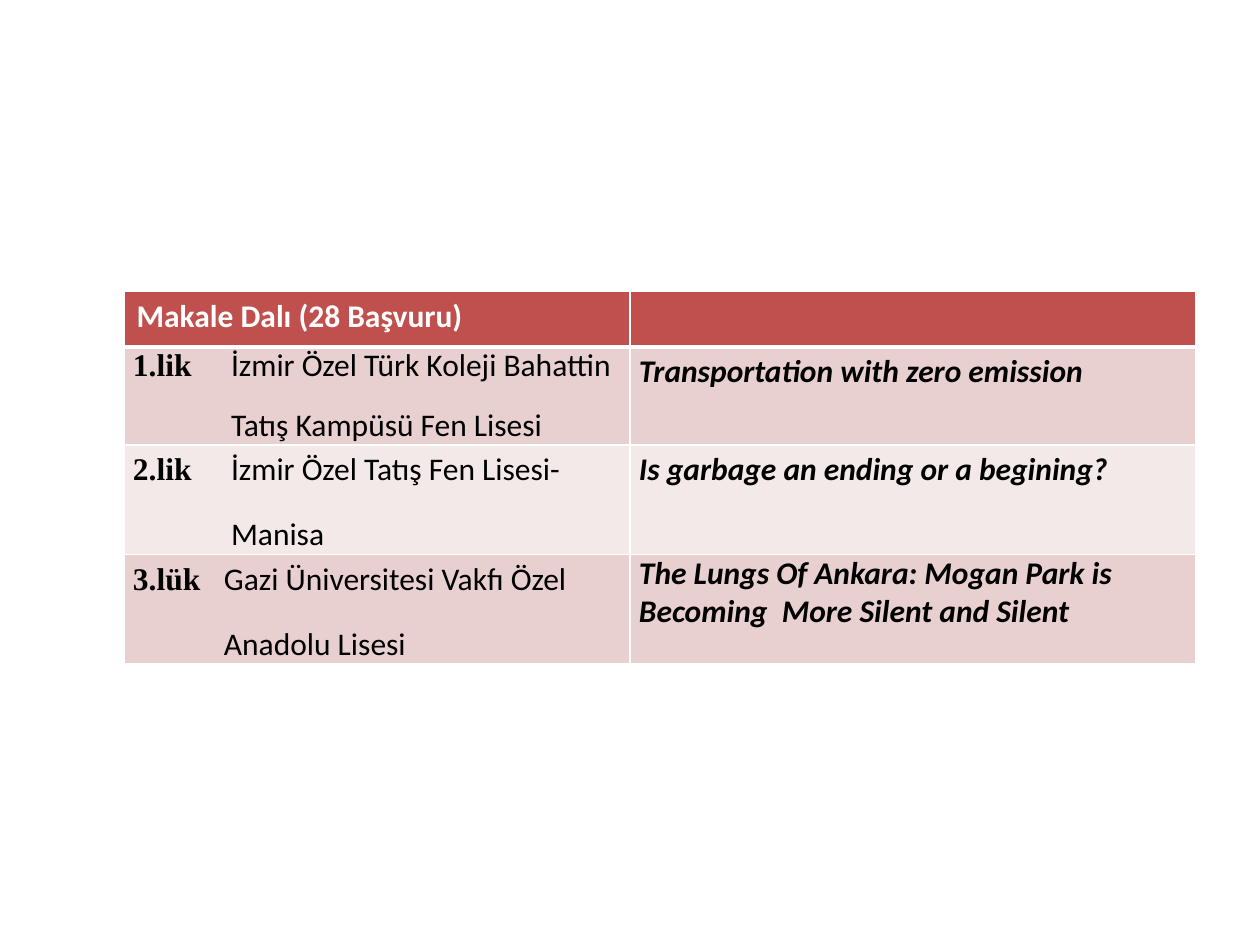
import pptx
import pptx.dml.color
import pptx.oxml
import pptx.oxml.ns
import pptx.util

PX = 914400 / 126


def px(n):
    return pptx.util.Emu(round(n * PX))


def rgb(code):
    return pptx.dml.color.RGBColor.from_string(code)


NS = pptx.oxml.ns.nsdecls("a")
GAP = pptx.util.Pt(6)

prs = pptx.Presentation()
prs.slide_width, prs.slide_height = px(1260), px(945)
slide = prs.slides.add_slide(prs.slide_layouts[6])

# Table grid
col_widths = [506, 566]
row_heights = [56, 97, 108, 107]
awards = slide.shapes.add_table(4, 2, px(124), px(291), px(sum(col_widths)),
                                px(sum(row_heights))).table
for column, width in zip(awards.columns, col_widths):
    column.width = px(width)
for row, height in zip(awards.rows, row_heights):
    row.height = px(height)

# White borders, heavier under the header, and row fills
fills = ["C0504D", "E8D0D0", "F4E9E9", "E8D0D0"]
for r, fill in enumerate(fills):
    for cell in awards.rows[r].cells:
        for side in "LRTB":
            heavy = (r, side) in [(0, "B"), (1, "T")]
            cell._tc.get_or_add_tcPr().append(pptx.oxml.parse_xml(
                f'<a:ln{side} {NS} w="{pptx.util.Pt(3 if heavy else 1)}"><a:solidFill>'
                f'<a:srgbClr val="FFFFFF"/></a:solidFill></a:ln{side}>'))
        cell.fill.solid()
        cell.fill.fore_color.rgb = rgb(fill)
        if r > 0:
            cell.margin_left = cell.margin_right = px(9)
            cell.margin_top = cell.margin_bottom = 0

# Header
awards.cell(0, 0).text = "Makale Dalı (28 Başvuru)"
for cell in awards.rows[0].cells:
    heading = cell.text_frame.paragraphs[0]
    heading.font.name = "Calibri"
    heading.font.size = pptx.util.Pt(18)
    heading.font.bold = True
    heading.font.color.rgb = rgb("FFFFFF")

# Rank, school in two lines, school indent, left spacing, article, right spacing
winners = [
    ("1.lik", "İzmir Özel Türk Koleji Bahattin", "Tatış Kampüsü Fen Lisesi", 98, None,
     "Transportation with zero emission", 1.15),
    ("2.lik", "İzmir Özel Tatış Fen Lisesi-", "Manisa", 98, 1.15,
     "Is garbage an ending or a begining?", 1.15),
    ("3.lük", "Gazi Üniversitesi Vakfı Özel", "Anadolu Lisesi", 91, 1.15,
     "The Lungs Of Ankara: Mogan Park is Becoming  More Silent and Silent", None),
]
for r, (rank, school, school_end, indent, spacing, article, article_spacing) in enumerate(winners, 1):
    entry = awards.cell(r, 0).text_frame
    first = entry.paragraphs[0]
    second = entry.add_paragraph()
    title = awards.cell(r, 1).text_frame.paragraphs[0]

    # School lines align at one tab and indent
    first.line_spacing = second.line_spacing = spacing
    first.space_after = second.space_before = second.space_after = GAP
    first._p.get_or_add_pPr().append(pptx.oxml.parse_xml(
        f'<a:tabLst {NS}><a:tab pos="{px(indent)}" algn="l"/></a:tabLst>'))
    second._p.get_or_add_pPr().set("marL", str(px(indent)))
    rank_run = first.add_run()
    rank_run.text = rank
    rank_run.font.name = "Times New Roman"
    rank_run.font.bold = True
    first.add_run().text = "\t" + school
    second.add_run().text = school_end

    # Article title
    title.add_run().text = article
    title.line_spacing = article_spacing
    if article_spacing:
        title.space_after = GAP

    for paragraph in (first, second, title):
        paragraph.font.name = "Calibri"
        paragraph.font.size = pptx.util.Pt(18)
        paragraph.font.color.rgb = rgb("000000")
    title.font.bold = title.font.italic = True

prs.save("out.pptx")
